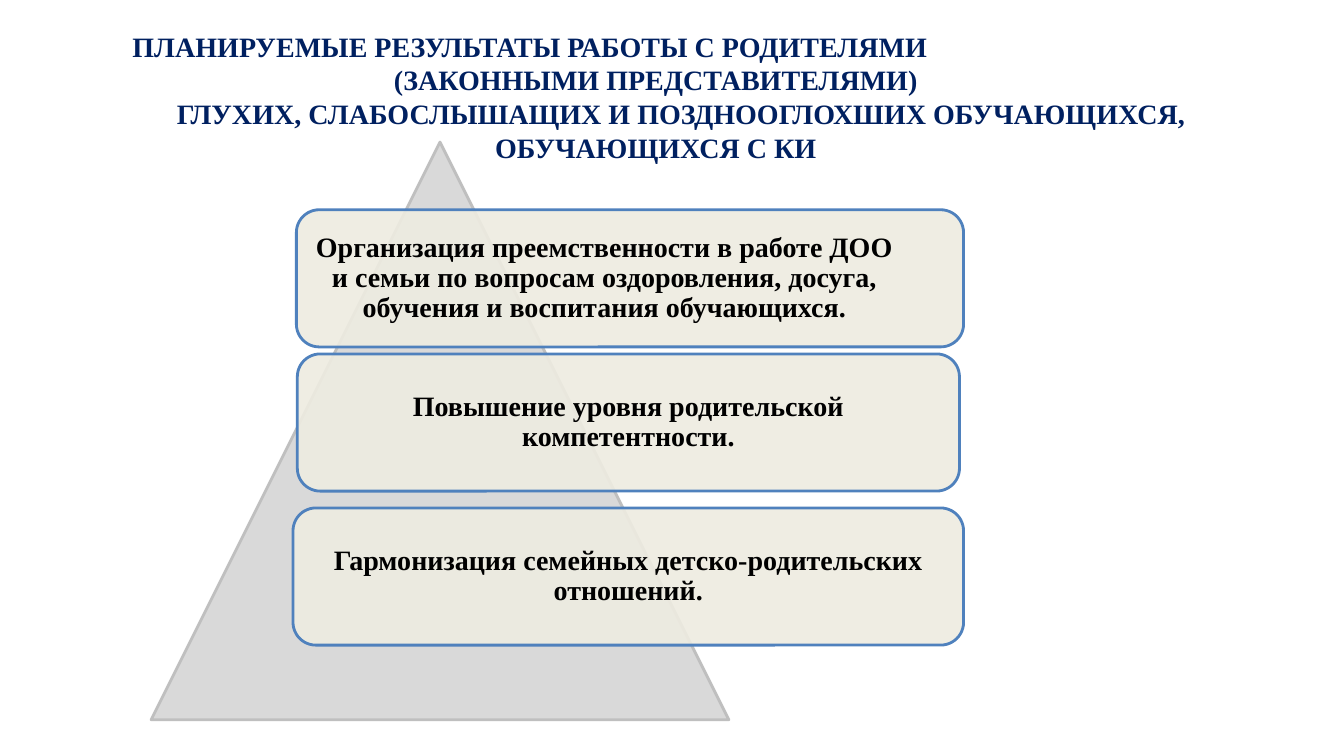
from lxml import etree
from pptx import Presentation
from pptx.dml.color import RGBColor
from pptx.enum import shapes, text
from pptx.oxml.ns import qn
from pptx.util import Pt

NAVY = RGBColor(0x00, 0x20, 0x60)
BLACK = RGBColor(0x00, 0x00, 0x00)
GREY = RGBColor(0xD9, 0xD9, 0xD9)
GREY_EDGE = RGBColor(0xBF, 0xBF, 0xBF)
CREAM = RGBColor(0xEE, 0xEC, 0xE1)
BLUE = RGBColor(0x4F, 0x81, 0xBD)

# Each paragraph: wording and its indents in points.
TITLE = [
    ("ПЛАНИРУЕМЫЕ РЕЗУЛЬТАТЫ РАБОТЫ С РОДИТЕЛЯМИ", {"marR": 185}),
    ("(ЗАКОННЫМИ ПРЕДСТАВИТЕЛЯМИ)", {"marR": 5}),
    ("ГЛУХИХ, СЛАБОСЛЫШАЩИХ И ПОЗДНООГЛОХШИХ ОБУЧАЮЩИХСЯ, "
     "ОБУЧАЮЩИХСЯ С КИ", {"indent": 36}),
]

# Each result: left, top and width in points, then its paragraphs.
RESULTS = [
    (211.7, 149.8, 476.6, [
        ("Организация преемственности в работе ДОО", {"marR": 36.5}),
        ("и семьи по вопросам оздоровления, досуга, "
         "обучения и воспитания обучающихся.", {}),
    ]),
    (212.4, 252.8, 473, [
        ("Повышение уровня родительской компетентности.", {}),
    ]),
    (209.3, 362.8, 479, [
        ("Гармонизация семейных детско-родительских отношений.", {}),
    ]),
]
RESULT_HEIGHT = 98


def write_paragraphs(frame, paragraphs, color, line_spacing):
    frame.word_wrap = True
    font_format = {"name": "Times New Roman", "size": Pt(20), "bold": True}
    for number, (wording, indents) in enumerate(paragraphs):
        paragraph = frame.add_paragraph() if number else frame.paragraphs[0]
        paragraph.alignment = text.PP_ALIGN.CENTER
        paragraph.line_spacing = line_spacing
        for side, length in indents.items():
            paragraph._p.get_or_add_pPr().set(side, str(Pt(length)))
        run = paragraph.add_run()
        run.text = wording
        for key, value in font_format.items():
            setattr(run.font, key, value)
        run.font.color.rgb = color


def add_outlined(slide, kind, place, fill, edge):
    shape = slide.shapes.add_shape(kind, *map(Pt, place))
    shape.shadow.inherit = False
    shape.fill.solid()
    shape.fill.fore_color.rgb = fill
    shape.line.color.rgb = edge
    shape.line.width = Pt(2)
    return shape


def set_opacity(shape, percent):
    color = shape._element.spPr.find(qn("a:solidFill"))[0]
    etree.SubElement(color, qn("a:alpha")).set("val", str(percent * 1000))


def add_title(slide):
    title = slide.shapes.add_textbox(Pt(21.6), Pt(17.3), Pt(898.6), Pt(147.6))
    write_paragraphs(title.text_frame, TITLE, NAVY, 1.0)


def add_result(slide, left, top, width, paragraphs):
    result = add_outlined(slide, shapes.MSO_SHAPE.ROUNDED_RECTANGLE,
                          (left, top, width, RESULT_HEIGHT), CREAM, BLUE)
    set_opacity(result, 90)
    frame = result.text_frame
    frame.vertical_anchor = text.MSO_ANCHOR.MIDDLE
    for side in ("left", "top", "right", "bottom"):
        setattr(frame, f"margin_{side}", Pt(5.5))
    write_paragraphs(frame, paragraphs, BLACK, 0.9)


def main():
    deck = Presentation()
    deck.slide_width, deck.slide_height = Pt(960), Pt(540)
    slide = deck.slides.add_slide(deck.slide_layouts[6])
    add_title(slide)
    add_outlined(slide, shapes.MSO_SHAPE.ISOSCELES_TRIANGLE,
                 (108, 101.5, 412.6, 412.6), GREY, GREY_EDGE)
    for result in RESULTS:
        add_result(slide, *result)
    deck.save("out.pptx")


if __name__ == "__main__":
    main()
